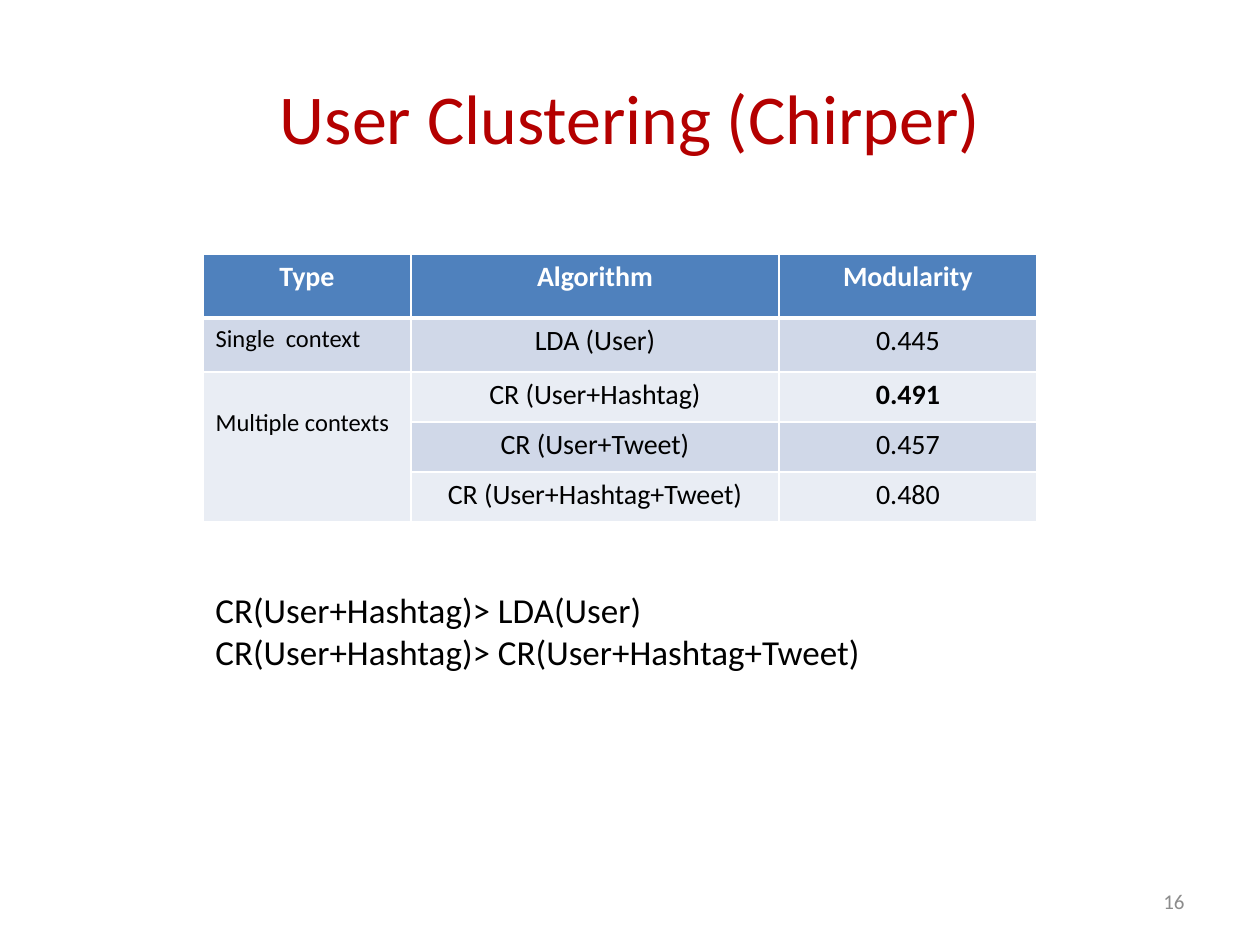
from pptx import Presentation
from pptx.dml.color import RGBColor
from pptx.enum.text import MSO_ANCHOR, PP_ALIGN
from pptx.oxml.ns import qn
from pptx.util import Emu, Pt
from lxml.etree import SubElement

PIXELS_PER_INCH = 126
COLUMN_WIDTHS = [208, 368, 258]
ROW_HEIGHTS = [64, 54, 50, 50, 50]
ROWS = [
    ["Type", "Algorithm", "Modularity"],
    ["Single  context", "LDA (User)", "0.445"],
    ["Multiple contexts", "CR (User+Hashtag)", "0.491"],
    ["", "CR (User+Tweet)", "0.457"],
    ["", "CR (User+Hashtag+Tweet)", "0.480"],
]
BEST_SCORE = "0.491"
HEADER_FILL = "4F81BD"
BAND_FILLS = ["E9EDF4", "D0D8E8"]


def px(length):
    return Emu(round(length * 914400 / PIXELS_PER_INCH))


def color(value):
    return RGBColor.from_string(value)


def write(frame, text, size=16, fill="000000", bold=False,
          align=PP_ALIGN.LEFT, anchor=MSO_ANCHOR.TOP):
    frame.word_wrap = True
    frame.vertical_anchor = anchor
    for index, line in enumerate(text.split("\n")):
        para = frame.add_paragraph() if index else frame.paragraphs[0]
        para.alignment = align
        span = para.add_run()
        span.text = line
        span.font.name = "Calibri"
        span.font.size = Pt(size)
        span.font.bold = bold
        span.font.color.rgb = color(fill)


def add_text(page, box, text, **text_format):
    shape = page.shapes.add_textbox(*map(px, box))
    write(shape.text_frame, text, **text_format)


def add_borders(cell, bottom):
    properties = cell._tc.get_or_add_tcPr()
    for side, width in zip("LRTB", [1, 1, 1, bottom]):
        line = SubElement(properties, qn(f"a:ln{side}"), w=str(Pt(width)))
        solid = SubElement(line, qn("a:solidFill"))
        SubElement(solid, qn("a:srgbClr"), val="FFFFFF")


def fill_cell(cell, text, row, column):
    header = row == 0
    add_borders(cell, bottom=3 if header else 1)
    cell.fill.solid()
    cell.fill.fore_color.rgb = color(HEADER_FILL if header else BAND_FILLS[row % 2])
    if text:
        label = column == 0 and not header
        write(cell.text_frame, text,
              size=14 if label else 16,
              fill="FFFFFF" if header else "000000",
              bold=header or text == BEST_SCORE,
              align=PP_ALIGN.LEFT if label else PP_ALIGN.CENTER)


def add_scores(page, left, top):
    frame = page.shapes.add_table(
        len(ROWS), len(COLUMN_WIDTHS), px(left), px(top),
        px(sum(COLUMN_WIDTHS)), px(sum(ROW_HEIGHTS)))
    table = frame.table
    for column, width in zip(table.columns, COLUMN_WIDTHS):
        column.width = px(width)
    for row, height in zip(table.rows, ROW_HEIGHTS):
        row.height = px(height)
    for row, texts in enumerate(ROWS):
        for column, text in enumerate(texts):
            fill_cell(table.cell(row, column), text, row, column)
    contexts = table.cell(2, 0)
    contexts.merge(table.cell(4, 0))
    contexts.margin_top = px(36)


def main():
    deck = Presentation()
    deck.slide_width, deck.slide_height = px(1260), px(945)
    page = deck.slides.add_slide(deck.slide_layouts[6])
    add_text(page, (63, 38, 1134, 158), "User Clustering (Chirper)", size=40,
             fill="B40000", align=PP_ALIGN.CENTER, anchor=MSO_ANCHOR.MIDDLE)
    add_text(page, (203, 582, 953, 140),
             "CR(User+Hashtag)> LDA(User)\nCR(User+Hashtag)> CR(User+Hashtag+Tweet)",
             size=20)
    add_text(page, (903, 876, 294, 50), "16", size=12, fill="8C8C8C",
             align=PP_ALIGN.RIGHT, anchor=MSO_ANCHOR.MIDDLE)
    add_scores(page, 203, 254)
    deck.save("out.pptx")


if __name__ == "__main__":
    main()
